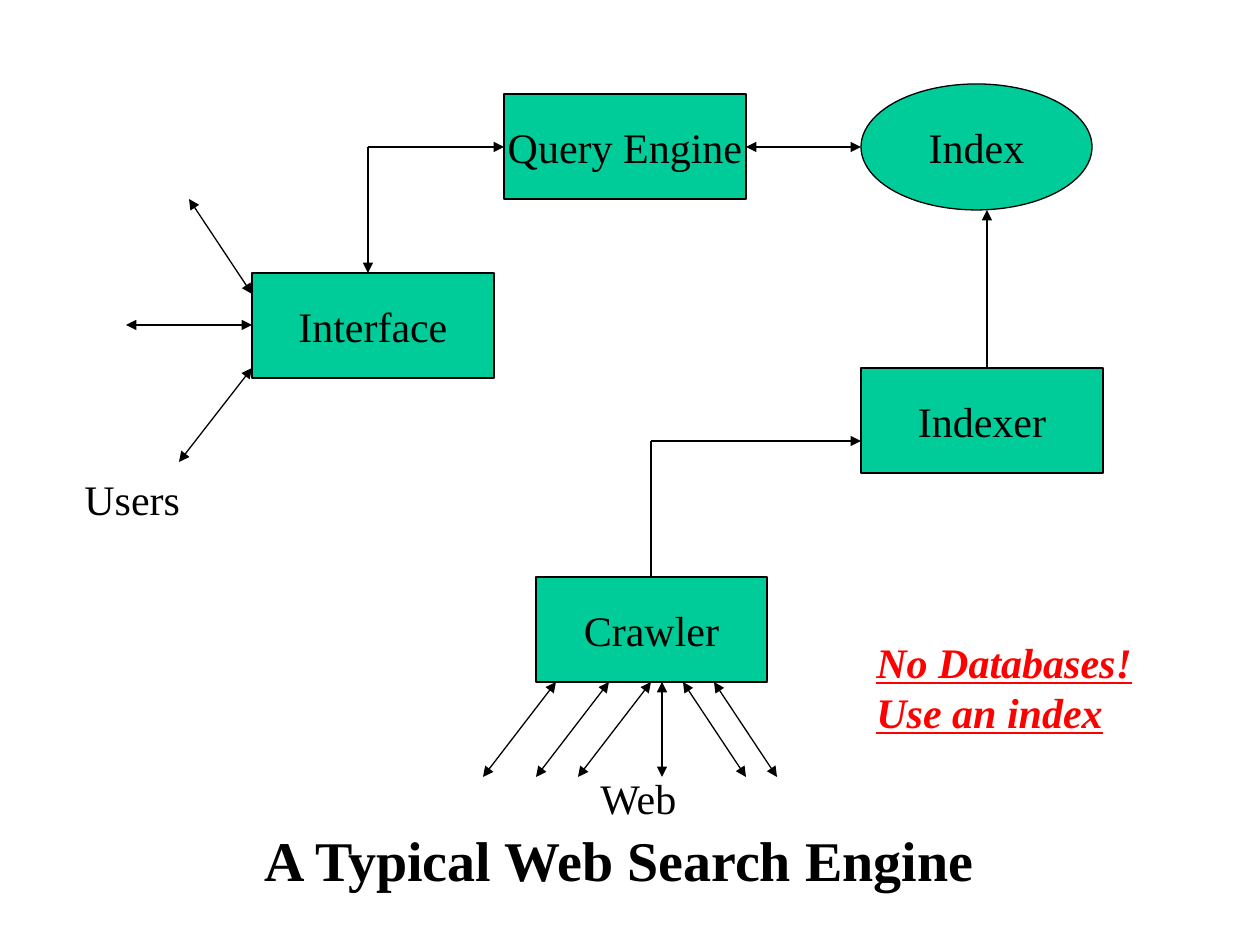
import pptx
import pptx.util
import pptx.dml.color
import pptx.enum.shapes
import pptx.enum.text
import pptx.oxml.ns
import lxml.etree
from dataclasses import dataclass

PX = 914400 / 126
KIND = pptx.enum.shapes.MSO_SHAPE
ALIGN = pptx.enum.text.PP_ALIGN
ANCHOR = pptx.enum.text.MSO_ANCHOR


@dataclass(frozen=True)
class Theme:
    font: str = "Times New Roman"
    ink: str = "000000"
    fill: str = "00CC99"
    alert: str = "FF0000"
    body: int = 24
    title: int = 32
    line: float = 0.75


THEME = Theme()


def emu(px):
    return pptx.util.Emu(round(px * PX))


def color(code):
    return pptx.dml.color.RGBColor.from_string(code)


def place(shape, area):
    shape.left, shape.top, shape.width, shape.height = map(emu, area)


def write(shape, lines, size=THEME.body, ink=THEME.ink, align=ALIGN.LEFT,
          anchor=ANCHOR.TOP, bold=False, accent=False):
    frame = shape.text_frame
    frame.word_wrap = False
    frame.vertical_anchor = anchor
    for i, line in enumerate(lines):
        para = frame.add_paragraph() if i else frame.paragraphs[0]
        para.alignment = align
        run = para.add_run()
        run.text = line
        font = run.font
        font.name, font.size = THEME.font, pptx.util.Pt(size)
        font.bold, font.italic, font.underline = bold, accent, accent
        font.color.rgb = color(ink)


def grow(shape):
    shape.text_frame.auto_size = pptx.enum.text.MSO_AUTO_SIZE.SHAPE_TO_FIT_TEXT


def stroke(line):
    line.color.rgb = color(THEME.ink)
    line.width = pptx.util.Pt(THEME.line)


def node(slide, text, area, kind=KIND.RECTANGLE):
    shape = slide.shapes.add_shape(kind, *map(emu, area))
    shape.shadow.inherit = False
    shape.fill.solid()
    shape.fill.fore_color.rgb = color(THEME.fill)
    stroke(shape.line)
    write(shape, [text], align=ALIGN.CENTER, anchor=ANCHOR.MIDDLE)


def label(slide, lines, area, **style):
    shape = slide.shapes.add_textbox(*map(emu, area))
    write(shape, lines, **style)
    grow(shape)


def link(slide, start, end, ends=("headEnd", "tailEnd")):
    wire = slide.shapes.add_connector(
        pptx.enum.shapes.MSO_CONNECTOR.STRAIGHT, *map(emu, start + end))
    stroke(wire.line)
    name = pptx.oxml.ns.qn
    line = wire.line._get_or_add_ln()
    for tip in ends:
        lxml.etree.SubElement(line, name("a:" + tip), type="triangle")
    lxml.etree.SubElement(wire._element.spPr, name("a:effectLst"))


def title(slide, text, area):
    shape = slide.shapes.title
    place(shape, area)
    write(shape, [text], size=THEME.title, bold=True)
    grow(shape)


def main():
    deck = pptx.Presentation()
    deck.slide_width, deck.slide_height = emu(1260), emu(945)
    slide = deck.slides.add_slide(deck.slide_layouts[5])
    title(slide, "A Typical Web Search Engine", (252, 819, 747, 79))

    node(slide, "Interface", (252, 273, 242, 105))
    node(slide, "Query Engine", (504, 94, 242, 105))
    node(slide, "Indexer", (861, 368, 242, 105))
    node(slide, "Index", (861, 84, 231, 126), KIND.OVAL)
    node(slide, "Crawler", (536, 577, 231, 105))

    for top, foot in ((556, 483), (609, 536), (651, 578),
                      (662, 662), (683, 746), (714, 777)):
        link(slide, (top, 682), (foot, 777))
    for edge, user in ((294, (189, 199)), (325, (126, 325)), (368, (179, 462))):
        link(slide, (252, edge), user)

    tail = ("tailEnd",)
    link(slide, (651, 577), (651, 441), ())
    link(slide, (651, 441), (861, 441), tail)
    link(slide, (987, 368), (987, 210), tail)
    link(slide, (746, 147), (861, 147))
    link(slide, (368, 147), (504, 147), tail)
    link(slide, (368, 147), (368, 273), tail)

    label(slide, ["Users"], (72, 467, 121, 63))
    label(slide, ["Web"], (588, 766, 105, 63))
    label(slide, ["No Databases!", "Use an index"], (864, 630, 284, 115),
          ink=THEME.alert, bold=True, accent=True)
    deck.save("out.pptx")


if __name__ == "__main__":
    main()
